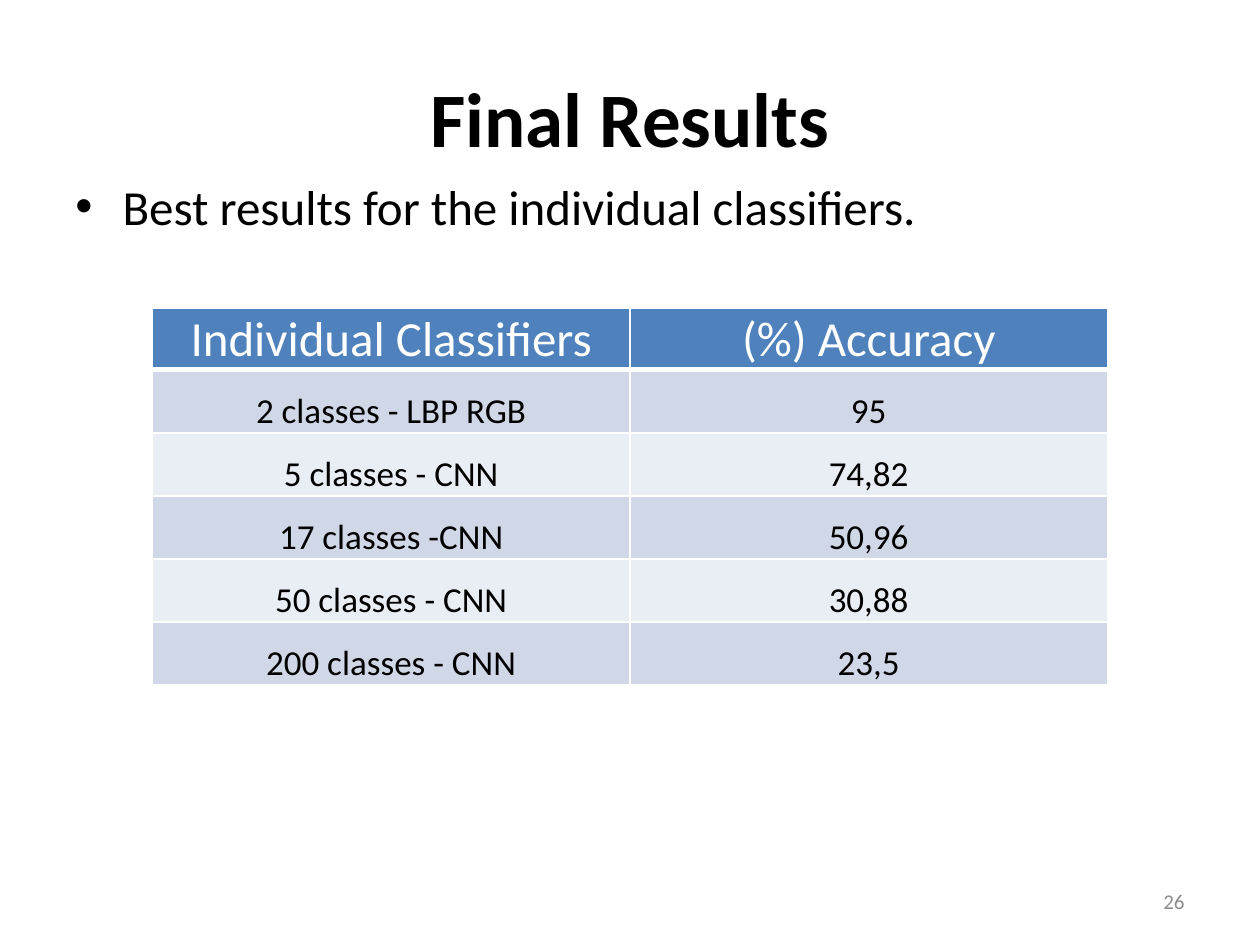
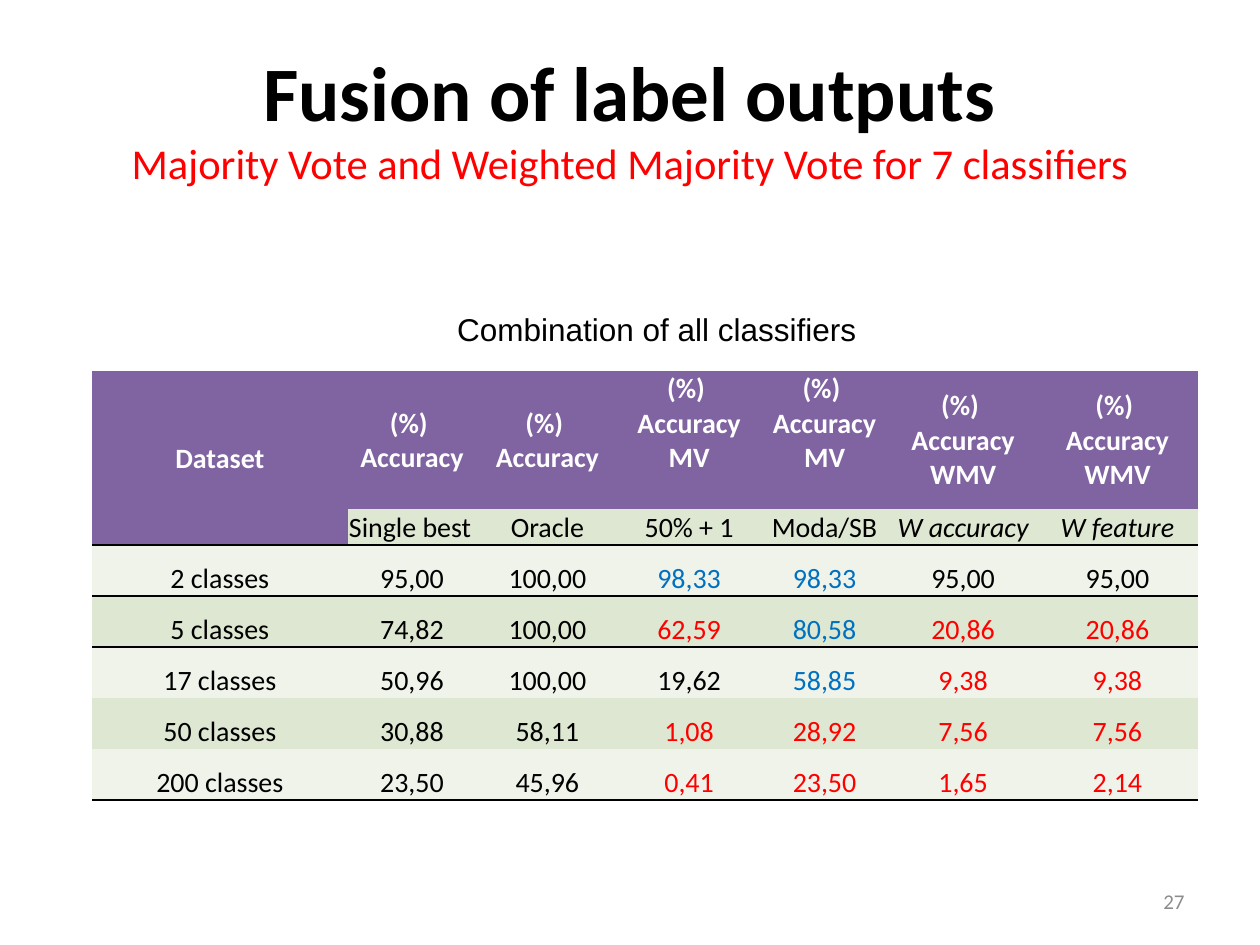
from dataclasses import dataclass
from typing import Optional

from lxml.etree import SubElement
from pptx import Presentation
from pptx.dml.color import RGBColor
from pptx.enum.text import MSO_ANCHOR, PP_ALIGN
from pptx.oxml.ns import qn
from pptx.util import Emu, Pt

PX_PER_INCH = 200
EMU_PER_PX = 914400 // PX_PER_INCH
PLAIN_TABLE_STYLE = "{2D5ABB26-0587-4C30-8999-92F81FD0307C}"

BLACK = "000000"
WHITE = "FFFFFF"
RED = "FF0000"
BLUE = "0070C0"
PAGE_GREY = "8C8C8C"
HEADER_BLUE = "4F81BD"
BLUE_BANDS = ("D0D8E8", "E9EDF4")
HEADER_PURPLE = "8064A2"
GREEN_BANDS = ("EFF3EA", "DEE7D1")
TONES = {"k": BLACK, "b": BLUE, "r": RED}


@dataclass(frozen=True)
class Box:
    left: int
    top: int
    width: int
    height: int


@dataclass(frozen=True)
class TextStyle:
    size: float
    color: str = BLACK
    bold: bool = False
    italic: bool = False
    font: str = "Calibri"
    align: PP_ALIGN = PP_ALIGN.CENTER
    anchor: MSO_ANCHOR = MSO_ANCHOR.MIDDLE


@dataclass(frozen=True)
class Border:
    color: str
    points: float


@dataclass(frozen=True)
class CellStyle:
    text: TextStyle
    fill: str
    left: Optional[Border] = None
    right: Optional[Border] = None
    top: Optional[Border] = None
    bottom: Optional[Border] = None


@dataclass(frozen=True)
class ResultRow:
    values: tuple[str, ...]
    tones: str


TITLE_BOX = Box(100, 60, 1800, 250)
PAGE_BOX = Box(1434, 1390, 466, 80)
TITLE = TextStyle(44, bold=True)
SUBTITLE = TextStyle(24.3, RED)
PAGE_NUMBER = TextStyle(12, PAGE_GREY, align=PP_ALIGN.RIGHT)
BULLET = TextStyle(28, align=PP_ALIGN.LEFT, anchor=MSO_ANCHOR.TOP)
CAPTION = TextStyle(18, font="Arial", align=PP_ALIGN.LEFT, anchor=MSO_ANCHOR.TOP)

WHITE_LINE = Border(WHITE, 1)
WHITE_RULE = Border(WHITE, 3)
BLACK_LINE = Border(BLACK, 1)

CLASSIFIER_ROWS = (
    ("Individual Classifiers", "(%) Accuracy"),
    ("2 classes - LBP RGB", "95"),
    ("5 classes - CNN", "74,82"),
    ("17 classes -CNN", "50,96"),
    ("50 classes - CNN", "30,88"),
    ("200 classes - CNN", "23,5"),
)

FUSION_MEASURES = ("", "", "MV", "MV", "WMV", "WMV")
FUSION_RULES = ("Single best", "Oracle", "50% + 1", "Moda/SB", "W accuracy", "W feature")
FUSION_ROWS = (
    ResultRow(("2 classes", "95,00", "100,00", "98,33", "98,33", "95,00", "95,00"), "kkkbbkk"),
    ResultRow(("5 classes", "74,82", "100,00", "62,59", "80,58", "20,86", "20,86"), "kkkrbrr"),
    ResultRow(("17 classes", "50,96", "100,00", "19,62", "58,85", "9,38", "9,38"), "kkkkbrr"),
    ResultRow(("50 classes", "30,88", "58,11", "1,08", "28,92", "7,56", "7,56"), "kkkrrrr"),
    ResultRow(("200 classes", "23,50", "45,96", "0,41", "23,50", "1,65", "2,14"), "kkkrrrr"),
)


def px(length: int) -> Emu:
    return Emu(length * EMU_PER_PX)


def rgb(color: str) -> RGBColor:
    return RGBColor.from_string(color)


def format_run(run, style: TextStyle) -> None:
    run.font.name = style.font
    run.font.size = Pt(style.size)
    run.font.bold = style.bold
    run.font.italic = style.italic
    run.font.color.rgb = rgb(style.color)


def fill_text(text_frame, text: str, style: TextStyle) -> None:
    text_frame.text = text
    for paragraph in text_frame.paragraphs:
        paragraph.alignment = style.align
        for run in paragraph.runs:
            format_run(run, style)


def add_text(slide, box: Box, text: str, style: TextStyle):
    shape = slide.shapes.add_textbox(px(box.left), px(box.top), px(box.width), px(box.height))
    text_frame = shape.text_frame
    text_frame.word_wrap = True
    text_frame.vertical_anchor = style.anchor
    fill_text(text_frame, text, style)
    return shape


def add_bullet(paragraph, indent: int) -> None:
    properties = paragraph._p.get_or_add_pPr()
    properties.set("marL", str(px(indent)))
    properties.set("indent", str(-px(indent)))
    SubElement(properties, qn("a:buFont"), typeface="Arial")
    SubElement(properties, qn("a:buChar"), char="•")


def add_frame(presentation, title: str, page: str):
    slide = presentation.slides.add_slide(presentation.slide_layouts[6])
    title_shape = add_text(slide, TITLE_BOX, title, TITLE)
    add_text(slide, PAGE_BOX, page, PAGE_NUMBER)
    return slide, title_shape


def add_plain_table(slide, left: int, top: int, widths: list[int], heights: list[int]):
    frame = slide.shapes.add_table(
        len(heights), len(widths), px(left), px(top), px(sum(widths)), px(sum(heights))
    )
    table = frame.table
    table.first_row = False
    table.horz_banding = False
    table._tbl.tblPr.find(qn("a:tableStyleId")).text = PLAIN_TABLE_STYLE
    for column, width in zip(table.columns, widths):
        column.width = px(width)
    for row, height in zip(table.rows, heights):
        row.height = px(height)
    return table


def fill_cell(cell, text: str, style: CellStyle) -> None:
    cell.margin_left = cell.margin_top = cell.margin_right = px(2)
    cell.margin_bottom = 0
    cell.vertical_anchor = style.text.anchor
    fill_text(cell.text_frame, text, style.text)
    properties = cell._tc.get_or_add_tcPr()
    sides = {"lnL": style.left, "lnR": style.right, "lnT": style.top, "lnB": style.bottom}
    for tag, border in sides.items():
        if border:
            line = SubElement(properties, qn(f"a:{tag}"), w=str(Pt(border.points)))
            solid = SubElement(line, qn("a:solidFill"))
            SubElement(solid, qn("a:srgbClr"), val=border.color)
    cell.fill.solid()
    cell.fill.fore_color.rgb = rgb(style.fill)


def build_final_results(presentation) -> None:
    slide, _ = add_frame(presentation, "Final Results", "26")
    body = add_text(
        slide, Box(100, 270, 1800, 160), "Best results for the individual classifiers.", BULLET
    )
    add_bullet(body.text_frame.paragraphs[0], 75)

    table = add_plain_table(slide, 242, 489, [758] * 2, [98] + [100] * 5)
    for row, values in enumerate(CLASSIFIER_ROWS):
        is_header = row == 0
        style = CellStyle(
            TextStyle(28 if is_header else 20, WHITE if is_header else BLACK, anchor=MSO_ANCHOR.BOTTOM),
            HEADER_BLUE if is_header else BLUE_BANDS[(row - 1) % 2],
            left=WHITE_LINE,
            right=WHITE_LINE,
            top=WHITE_RULE if row == 1 else WHITE_LINE,
            bottom=WHITE_RULE if is_header else WHITE_LINE,
        )
        for column, value in enumerate(values):
            fill_cell(table.cell(row, column), value, style)


def build_fusion_header(table) -> None:
    heading = TextStyle(16, WHITE, bold=True)
    raised = TextStyle(16, WHITE, bold=True, anchor=MSO_ANCHOR.TOP)
    table.cell(0, 0).merge(table.cell(1, 0))
    fill_cell(table.cell(0, 0), "Dataset", CellStyle(heading, HEADER_PURPLE, bottom=BLACK_LINE))
    for column, (measure, rule) in enumerate(zip(FUSION_MEASURES, FUSION_RULES), start=1):
        lines = ["(%) ", "Accuracy"] + ([measure] if measure else [])
        heading_style = raised if measure == "MV" else heading
        fill_cell(table.cell(0, column), "\n".join(lines), CellStyle(heading_style, HEADER_PURPLE))
        rule_style = TextStyle(
            16,
            italic=measure == "WMV",
            align=PP_ALIGN.LEFT if column == 1 else PP_ALIGN.CENTER,
        )
        fill_cell(
            table.cell(1, column), rule, CellStyle(rule_style, GREEN_BANDS[1], bottom=BLACK_LINE)
        )


def build_label_fusion(presentation) -> None:
    slide, title = add_frame(
        presentation,
        "Fusion of label outputs\vMajority Vote and Weighted Majority Vote for 7 classifiers",
        "27",
    )
    format_run(title.text_frame.paragraphs[0].runs[1], SUBTITLE)

    widths = [406, 204, 226, 224, 206, 234, 256]
    table = add_plain_table(slide, 146, 589, widths, [219, 57] + [81] * 5)
    build_fusion_header(table)
    ruled_rows = (0, len(FUSION_ROWS) - 1)
    for index, result in enumerate(FUSION_ROWS):
        for column, (value, tone) in enumerate(zip(result.values, result.tones)):
            style = CellStyle(
                TextStyle(16, TONES[tone], anchor=MSO_ANCHOR.BOTTOM),
                GREEN_BANDS[index % 2],
                top=BLACK_LINE if index in (0, 1) else None,
                bottom=BLACK_LINE if index in ruled_rows else None,
            )
            fill_cell(table.cell(index + 2, column), value, style)

    add_text(slide, Box(706, 482, 696, 80), "Combination of all classifiers", CAPTION)


def main() -> None:
    presentation = Presentation()
    presentation.slide_width = px(2000)
    presentation.slide_height = px(1500)
    build_final_results(presentation)
    build_label_fusion(presentation)
    presentation.save("out.pptx")


if __name__ == "__main__":
    main()
